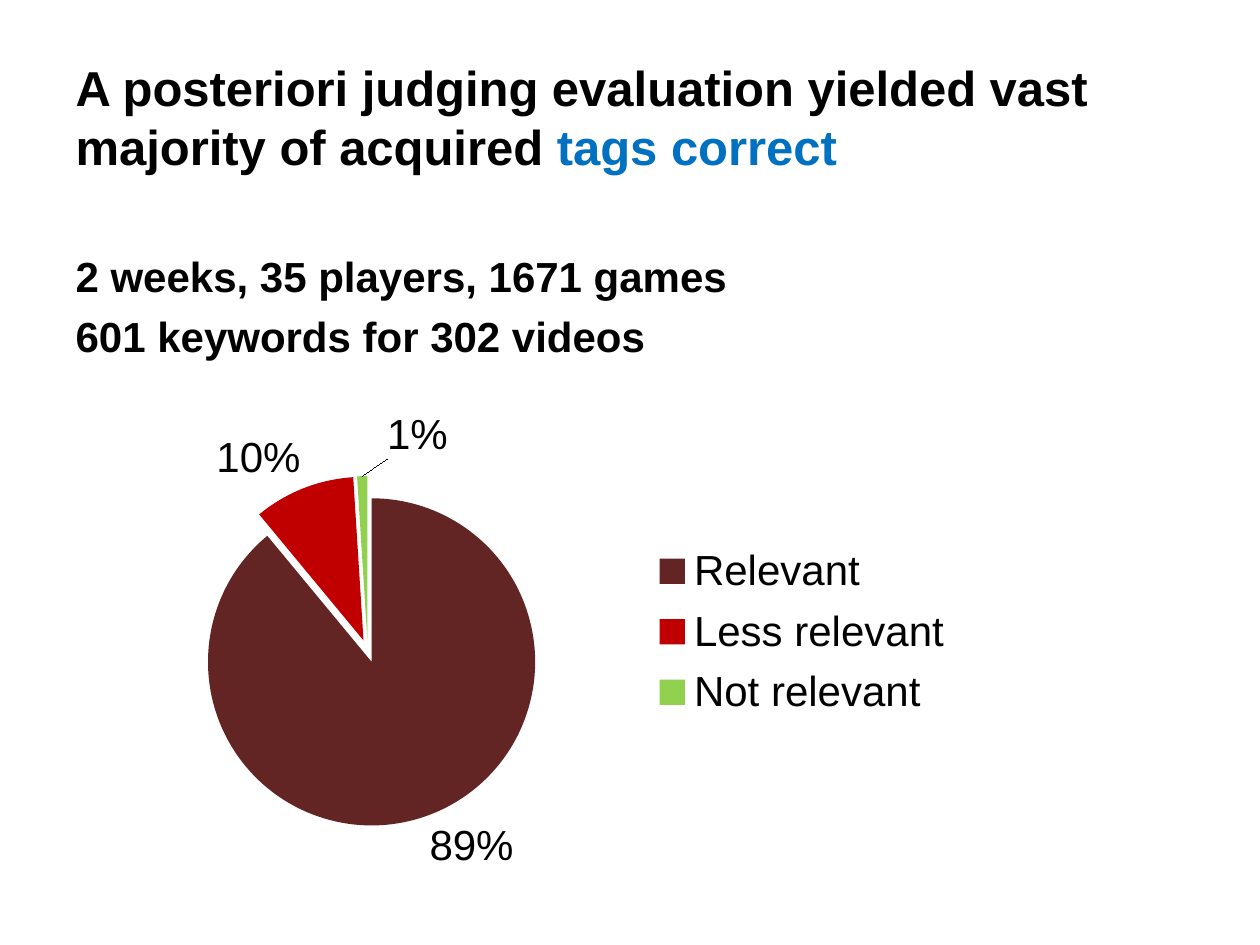
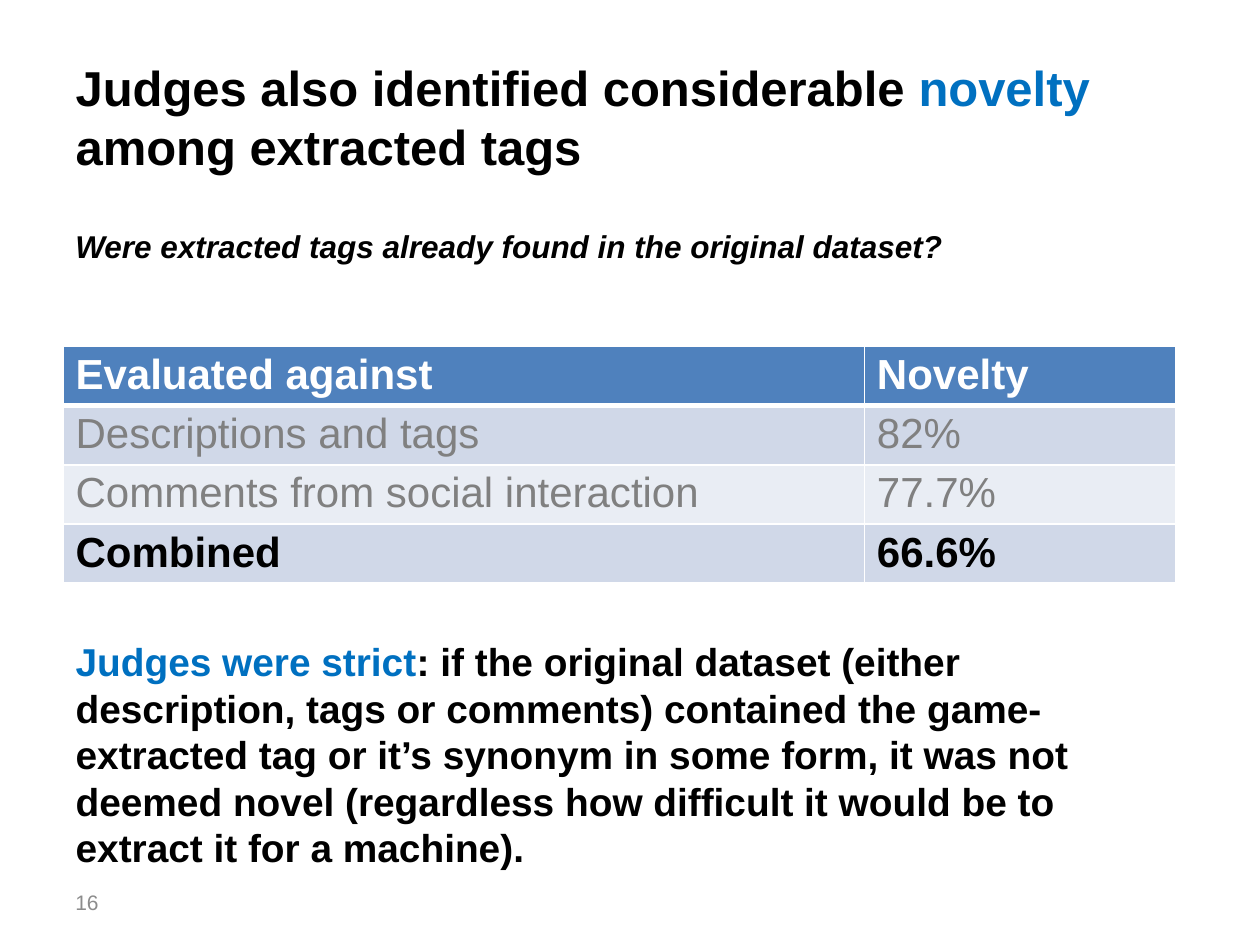
from dataclasses import dataclass

from lxml.etree import SubElement
from pptx import Presentation
from pptx.chart.data import CategoryChartData
from pptx.dml.color import RGBColor
from pptx.enum.chart import XL_CHART_TYPE as ChartType
from pptx.enum.chart import XL_LABEL_POSITION as LabelPosition
from pptx.enum.chart import XL_LEGEND_POSITION as LegendPosition
from pptx.enum.text import MSO_ANCHOR as Anchor
from pptx.enum.text import MSO_AUTO_SIZE as AutoSize
from pptx.enum.text import PP_ALIGN as Align
from pptx.oxml import parse_xml
from pptx.oxml.ns import nsdecls, qn
from pptx.util import Inches, Pt


@dataclass(frozen=True)
class Theme:
    font: str = "Arial"
    text: str = "000000"
    accent: str = "0070C0"
    muted: str = "808080"
    page_number: str = "8C8C8C"
    white: str = "FFFFFF"
    header: str = "4F81BD"
    bands: tuple = ("D0D8E8", "E9EDF4")
    slices: tuple = ("632523", "C00000", "92D050")
    title_size: float = 28
    large_size: float = 24
    note_size: float = 22.2
    question_size: float = 18
    small_size: float = 12
    paragraph_gap: float = 5.5


THEME = Theme()
WIDTH, HEIGHT = 10, 7.5
MARGIN = WIDTH / 20
CONTENT_WIDTH = WIDTH - 2 * MARGIN

# Each paragraph is a list of (text, colour) runs.
CORRECTNESS_TITLE = [("A posteriori judging evaluation yielded vast majority of acquired ", THEME.text),
                     ("tags correct", THEME.accent)]
EXPERIMENT_FACTS = [[("2 weeks, 35 players, 1671 games", THEME.text)],
                    [("601 keywords for 302 videos", THEME.text)]]
RELEVANCE = {"Relevant": 89, "Less relevant": 10, "Not relevant": 1}

NOVELTY_TITLE = [("Judges also identified considerable ", THEME.text),
                 ("novelty", THEME.accent),
                 (" among extracted tags", THEME.text)]
QUESTION = [("Were extracted tags already found in the original dataset?", THEME.text)]
NOVELTY_ROWS = [("Evaluated against", "Novelty"),
                ("Descriptions and tags", "82%"),
                ("Comments from social interaction", "77.7%"),
                ("Combined", "66.6%")]
NOVELTY_COLUMNS = (6.36, 2.47)
NOVELTY_ROW_HEIGHT = 0.47
STRICTNESS = [("Judges were strict", THEME.accent),
              (": if the original dataset (either description, tags or comments) contained the "
               "game-extracted tag or it’s synonym in some form, it was not deemed novel "
               "(regardless how difficult it would be to extract it for a machine).", THEME.text)]
PAGE_NUMBER = [("16", THEME.page_number)]


def color(value):
    return RGBColor.from_string(value)


def style_font(font, size, value=THEME.text, bold=False, italic=False):
    font.name = THEME.font
    font.size = Pt(size)
    font.bold = bold
    font.italic = italic
    font.color.rgb = color(value)


def place(shape, left, top, width, height):
    shape.left, shape.top = Inches(left), Inches(top)
    shape.width, shape.height = Inches(width), Inches(height)


def write(shape, paragraphs, size, bold=True, italic=False, anchor=Anchor.TOP):
    """Fill a shape with left-aligned, unbulleted paragraphs of coloured runs."""
    frame = shape.text_frame
    frame.word_wrap = True
    frame.auto_size = AutoSize.NONE
    frame.vertical_anchor = anchor
    for index, runs in enumerate(paragraphs):
        paragraph = frame.add_paragraph() if index else frame.paragraphs[0]
        paragraph.alignment = Align.LEFT
        paragraph.space_before = Pt(THEME.paragraph_gap if index else 0)
        properties = paragraph._p.get_or_add_pPr()
        properties.set("marL", "0")
        properties.set("indent", "0")
        SubElement(properties, qn("a:buNone"))
        for text, value in runs:
            run = paragraph.add_run()
            run.text = text
            style_font(run.font, size, value, bold, italic)


def add_slide(presentation, title, body, body_size, body_top, body_height):
    slide = presentation.slides.add_slide(presentation.slide_layouts[1])
    place(slide.shapes.title, MARGIN, 0.3, CONTENT_WIDTH, 1.25)
    write(slide.shapes.title, [title], THEME.title_size, anchor=Anchor.MIDDLE)
    place(slide.placeholders[1], MARGIN, body_top, CONTENT_WIDTH, body_height)
    write(slide.placeholders[1], body, body_size)
    return slide


def add_text(slide, runs, size, top, width, height, **style):
    box = slide.shapes.add_textbox(0, 0, 0, 0)
    place(box, MARGIN, top, width, height)
    write(box, [runs], size, **style)


def layout_xml(x, y, width=None, height=None, inner=False):
    """Manual chart layout in shares of the chart; without a size, x and y are offsets."""
    parts = [("layoutTarget", "inner")] if inner else []
    if width:
        parts += [("xMode", "edge"), ("yMode", "edge")]
    parts += [("x", x), ("y", y)]
    if width:
        parts += [("w", width), ("h", height)]
    body = "".join(f'<c:{name} val="{value}"/>' for name, value in parts)
    return parse_xml(f'<c:layout {nsdecls("c")}><c:manualLayout>{body}</c:manualLayout></c:layout>')


def add_relevance_pie(slide):
    data = CategoryChartData()
    data.categories = list(RELEVANCE)
    data.add_series("Series 1", list(RELEVANCE.values()))
    frame = slide.shapes.add_chart(ChartType.PIE, Inches(MARGIN), Inches(3.2),
                                   Inches(7.33), Inches(3.86), data)
    chart = frame.chart
    chart.has_title = False
    style_font(chart.font, THEME.question_size)
    plot = chart.plots[0]
    plot.vary_by_categories = True

    chart.has_legend = True
    legend = chart.legend
    legend.position = LegendPosition.RIGHT
    legend.include_in_layout = False
    style_font(legend.font, THEME.large_size)
    legend._element.find(qn("c:legendPos")).addnext(layout_xml(0.63, 0.27, 0.34, 0.4))

    plot_area = chart._chartSpace.chart.plotArea
    for old_layout in plot_area.findall(qn("c:layout")):
        plot_area.remove(old_layout)
    plot_area.insert(0, layout_xml(0.14, 0.15, 0.38, 0.72, inner=True))

    series = plot.series[0]
    for index, value in enumerate(THEME.slices):
        fill = series.points[index].format.fill
        fill.solid()
        fill.fore_color.rgb = color(value)
    explosion = parse_xml(f'<c:explosion {nsdecls("c")} val="7"/>')
    series._element.find(qn("c:dPt")).addprevious(explosion)

    labels = series.data_labels
    labels.show_value = False
    labels.show_percentage = True
    labels.position = LabelPosition.OUTSIDE_END
    labels.number_format = "0%"
    labels.number_format_is_linked = False
    style_font(labels.font, THEME.large_size)

    smallest = series.points[len(RELEVANCE) - 1].data_label
    smallest.position = LabelPosition.OUTSIDE_END
    style_font(smallest.font, THEME.large_size)
    label = series._element.find(f'{qn("c:dLbls")}/{qn("c:dLbl")}')
    label.find(qn("c:idx")).addnext(layout_xml(0.06, -0.02))
    label.find(qn("c:showVal")).set("val", "0")
    label.find(qn("c:showPercent")).set("val", "1")


def add_borders(cell, bottom_width):
    properties = cell._tc.get_or_add_tcPr()
    for position, side in enumerate("LRTB"):
        width = Pt(bottom_width if side == "B" else 1)
        properties.insert(position, parse_xml(
            f'<a:ln{side} {nsdecls("a")} w="{width}"><a:solidFill>'
            f'<a:srgbClr val="{THEME.white}"/></a:solidFill></a:ln{side}>'))


def add_novelty_table(slide):
    row_count = len(NOVELTY_ROWS)
    table = slide.shapes.add_table(
        row_count, len(NOVELTY_COLUMNS), Inches(MARGIN), Inches(2.75),
        Inches(sum(NOVELTY_COLUMNS)), Inches(NOVELTY_ROW_HEIGHT * row_count)).table
    for column, width in zip(table.columns, NOVELTY_COLUMNS):
        column.width = Inches(width)
    for row_index, texts in enumerate(NOVELTY_ROWS):
        is_header, is_total = row_index == 0, row_index == row_count - 1
        fill = THEME.header if is_header else THEME.bands[(row_index - 1) % 2]
        text_color = THEME.white if is_header else THEME.text if is_total else THEME.muted
        for column_index, text in enumerate(texts):
            cell = table.cell(row_index, column_index)
            cell.margin_top = cell.margin_bottom = Inches(0.04)
            cell.fill.solid()
            cell.fill.fore_color.rgb = color(fill)
            add_borders(cell, 3 if is_header else 1)
            run = cell.text_frame.paragraphs[0].add_run()
            run.text = text
            style_font(run.font, THEME.large_size, text_color, is_header or is_total)


def main():
    presentation = Presentation()
    presentation.slide_width, presentation.slide_height = Inches(WIDTH), Inches(HEIGHT)

    correctness = add_slide(presentation, CORRECTNESS_TITLE, EXPERIMENT_FACTS,
                            THEME.large_size, 1.94, 1.26)
    add_relevance_pie(correctness)

    novelty = add_slide(presentation, NOVELTY_TITLE, [STRICTNESS], THEME.note_size, 5.01, 1.69)
    add_text(novelty, PAGE_NUMBER, THEME.small_size, 6.96, 2.33, 0.4,
             bold=False, anchor=Anchor.MIDDLE)
    add_novelty_table(novelty)
    add_text(novelty, QUESTION, THEME.question_size, 1.75, CONTENT_WIDTH, 0.73, italic=True)

    presentation.save("out.pptx")


if __name__ == "__main__":
    main()
